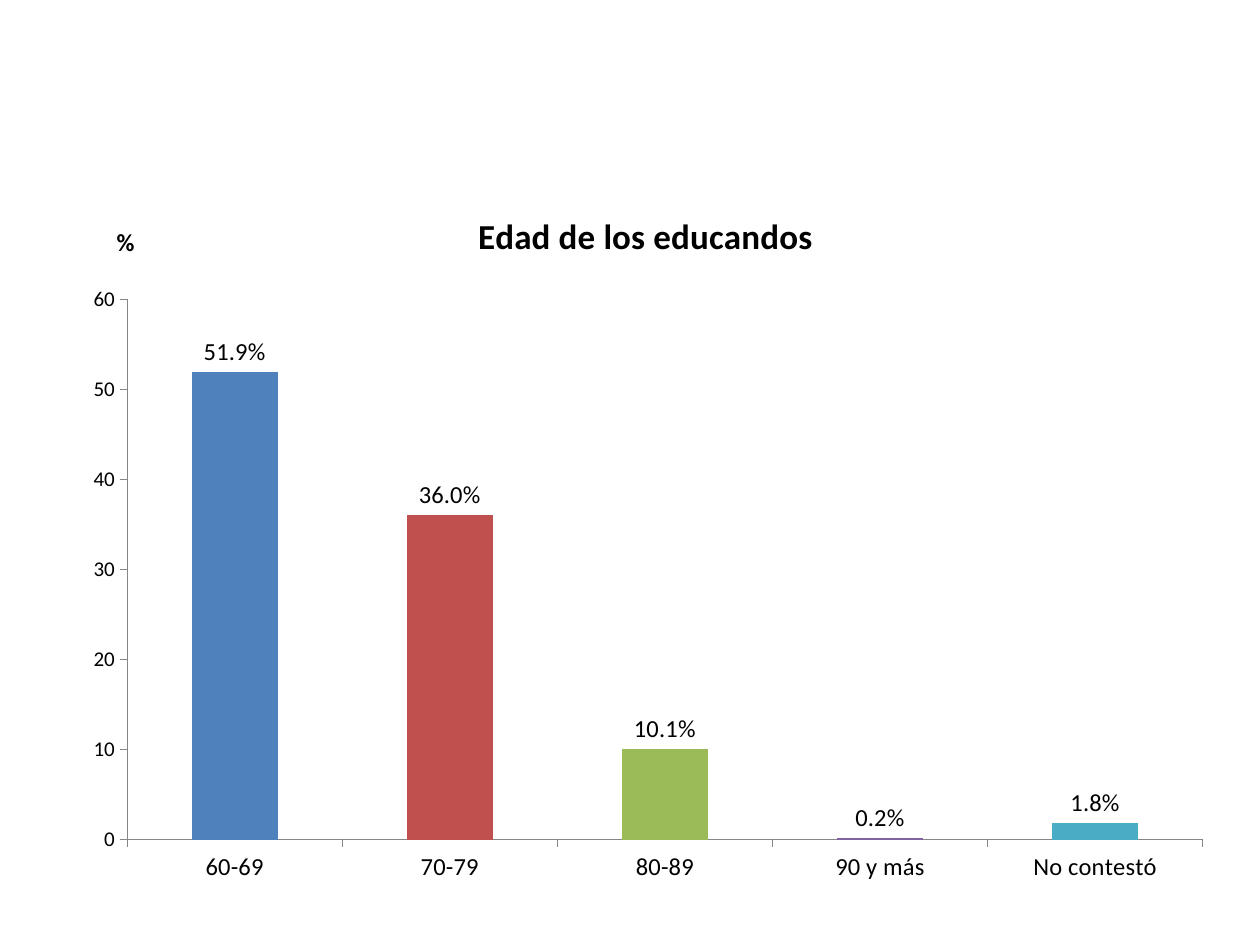
from lxml.etree import SubElement
from pptx import Presentation
from pptx.chart.data import CategoryChartData
from pptx.dml.color import RGBColor
from pptx.enum.chart import XL_CHART_TYPE, XL_LABEL_POSITION, XL_TICK_MARK
from pptx.oxml import parse_xml
from pptx.oxml.ns import nsdecls, qn
from pptx.util import Cm, Pt

AGES = [
    ("60-69", 51.9, "4F81BD"),
    ("70-79", 36.0, "C0504D"),
    ("80-89", 10.1, "9BBB59"),
    ("90 y más", 0.2, "8064A2"),
    ("No contestó", 1.8, "4BACC6"),
]
TITLE = "Edad de los educandos"
VALUE_TITLE = "%"
FONT = "Calibri"
BLACK = "000000"
AXIS_GRAY = "868686"


def color(value):
    return RGBColor.from_string(value)


def style_font(font, size, bold=False):
    font.name = FONT
    font.size = Pt(size)
    font.bold = bold
    font.color.rgb = color(BLACK)


def write_title(title, text, size):
    title.text_frame.text = text
    style_font(title.text_frame.paragraphs[0].font, size, True)


def place(element, position, **settings):
    layout = element.find(qn("c:layout"))
    if layout is None:
        layout = parse_xml(f"<c:layout {nsdecls('c')}/>")
        text = element.find(qn("c:tx"))
        if text is None:
            element.insert(0, layout)
        else:
            text.addnext(layout)
    manual = SubElement(layout, qn("c:manualLayout"))
    settings.update(xMode="edge", yMode="edge")
    settings.update(zip("xywh", position))
    for name, value in settings.items():
        SubElement(manual, qn(f"c:{name}")).set("val", str(value))


def style_axis(axis, size):
    axis.has_major_gridlines = False
    axis.major_tick_mark = XL_TICK_MARK.OUTSIDE
    axis.minor_tick_mark = XL_TICK_MARK.NONE
    axis.format.line.color.rgb = color(AXIS_GRAY)
    axis.format.line.width = Pt(0.75)
    style_font(axis.tick_labels.font, size)


def main():
    presentation = Presentation()
    presentation.slide_width = Cm(25.4)
    presentation.slide_height = Cm(19.05)
    slide = presentation.slides.add_slide(presentation.slide_layouts[6])

    chart_data = CategoryChartData()
    chart_data.categories = [age for age, _, _ in AGES]
    chart_data.add_series("Porcentaje", [value for _, value, _ in AGES])
    chart = slide.shapes.add_chart(
        XL_CHART_TYPE.COLUMN_CLUSTERED,
        Cm(1.09), Cm(3.53), Cm(23.39), Cm(15.19), chart_data,
    ).chart
    chart.has_legend = False
    style_font(chart.font, 10)

    chart.has_title = True
    write_title(chart.chart_title, TITLE, 20)
    chart.chart_title.include_in_layout = False
    place(chart.chart_title._element, (0.36, 0.04))

    style_axis(chart.category_axis, 14)
    value_axis = chart.value_axis
    style_axis(value_axis, 12)
    value_axis.minimum_scale = 0
    value_axis.maximum_scale = 60
    value_axis.major_unit = 10
    value_axis.tick_labels.number_format = "0"
    value_axis.tick_labels.number_format_is_linked = False
    write_title(value_axis.axis_title, VALUE_TITLE, 14)
    value_axis.axis_title.text_frame._txBody.bodyPr.set("rot", "0")
    place(value_axis.axis_title._element, (0.05, 0.06))

    plot = chart.plots[0]
    plot.gap_width = 150
    plot.vary_by_categories = False
    plot_area = chart._chartSpace.chart.plotArea
    place(plot_area, (0.063, 0.165, 0.927, 0.717), layoutTarget="inner")

    plot.has_data_labels = True
    labels = plot.data_labels
    labels.show_value = True
    labels.number_format = '0.0"%"'
    labels.number_format_is_linked = False
    labels.position = XL_LABEL_POSITION.OUTSIDE_END
    style_font(labels.font, 14)

    for index, (_, _, fill_color) in enumerate(AGES):
        fill = plot.series[0].points[index].format.fill
        fill.solid()
        fill.fore_color.rgb = color(fill_color)

    presentation.save("out.pptx")


if __name__ == "__main__":
    main()
